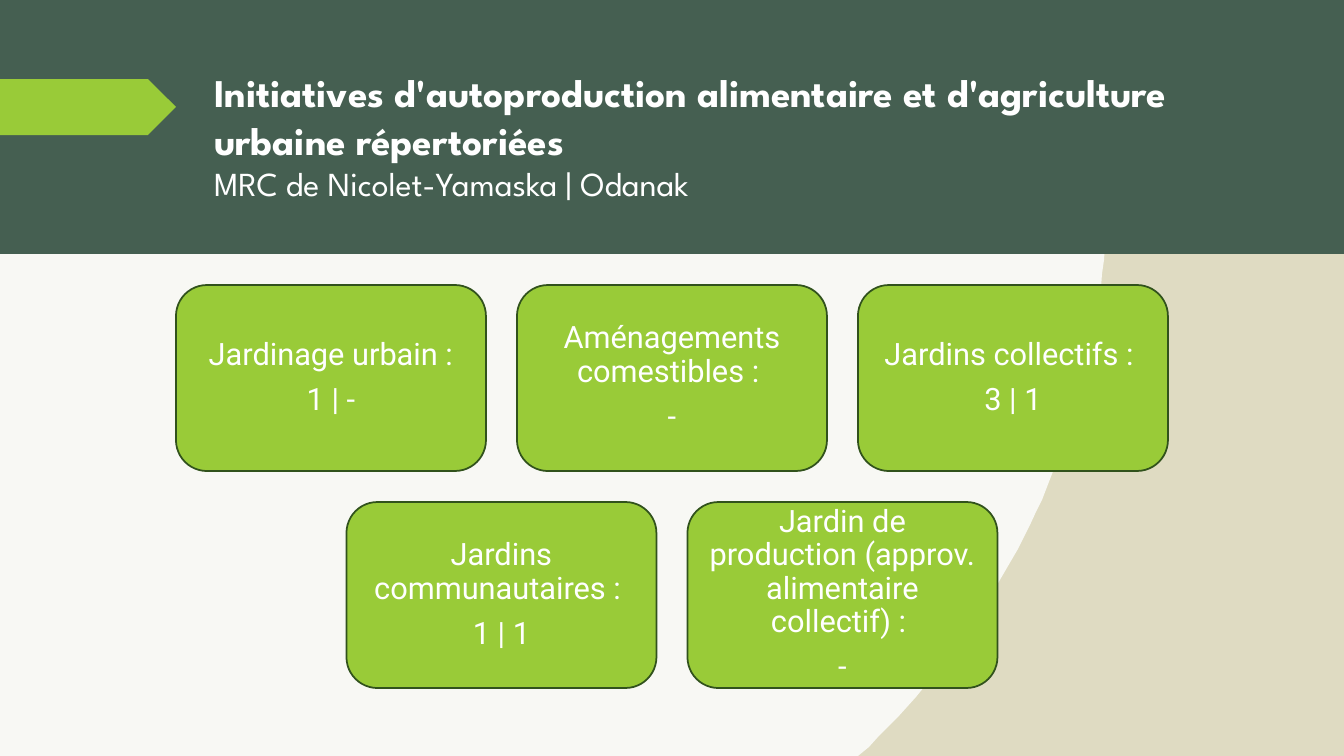
import math
from pptx import Presentation
from pptx import util as u
from pptx.dml.color import RGBColor
from pptx.enum import shapes as sh, text as tx

WIDE, HIGH = 1344, 756
SCALE = 12192000 / WIDE
GREEN, WHITE = "99CB38", "FFFFFF"
ROWS = [
    [("Jardinage urbain :", "1 | -"),
     ("Aménagements comestibles : ", "-"),
     ("Jardins collectifs : ", "3 | 1")],
    [("Jardins communautaires : ", "1 | 1"),
     ("Jardin de production (approv. alimentaire collectif) : ", "-")],
]


def px(n):
    return u.Emu(round(n * SCALE))


def tint(color, code):
    color.rgb = RGBColor.from_string(code)


def paint(item, code, edge=None):
    item.shadow.inherit = False
    item.fill.solid()
    tint(item.fill.fore_color, code)
    if edge:
        tint(item.line.color, edge)
        item.line.width = u.Pt(1.25)
    else:
        item.line.fill.background()


def shape(slide, kind, box, code, edge=None):
    item = slide.shapes.add_shape(kind, *map(px, box))
    paint(item, code, edge)
    return item


def write(para, words, face, size, bold=False):
    run = para.add_run()
    run.text = words
    run.font.name, run.font.size, run.font.bold = face, u.Pt(size), bold
    tint(run.font.color, WHITE)


def ground(slide, box):
    x, y, w, h = box
    slide.background.fill.solid()
    tint(slide.background.fill.fore_color, "DFDBC2")
    mid_x, mid_y, rad = x + w / 4, y + h / 4, math.hypot(w, h) / 2
    low, top = math.asin((y - mid_y) / rad), math.asin((y + h - mid_y) / rad)
    steps = 60
    turns = [low + (top - low) * i / steps for i in range(steps + 1)]
    arc = [(mid_x + rad * math.cos(t), mid_y + rad * math.sin(t)) for t in turns]
    pen = slide.shapes.build_freeform(x, y, scale=SCALE)
    pen.add_line_segments(arc + [(x, y + h)], close=True)
    paint(pen.convert_to_shape(), "F8F8F4")


def header(slide, box):
    x, y, w, h = box
    shape(slide, sh.MSO_SHAPE.RECTANGLE, box, "455F51")
    shape(slide, sh.MSO_SHAPE.PENTAGON, (x, y + 79, 176, 56), GREEN)
    title = slide.shapes.title
    title.left, title.top, title.width, title.height = map(
        px, (x + 204, y + 56, w - 310, h - 94))
    slide.shapes._spTree.append(title._element)
    frame = title.text_frame
    frame.word_wrap = True
    frame.auto_size = tx.MSO_AUTO_SIZE.NONE
    frame.vertical_anchor = tx.MSO_ANCHOR.MIDDLE
    para = frame.paragraphs[0]
    para.alignment = tx.PP_ALIGN.LEFT
    face = "League Spartan"
    write(para, "Initiatives d'autoproduction alimentaire et d'agriculture "
          "urbaine répertoriées ", face, 28, True)
    para.add_line_break()
    write(para, "MRC de Nicolet-Yamaska | Odanak", face, 24)


def card(slide, box, lines):
    item = shape(slide, sh.MSO_SHAPE.ROUNDED_RECTANGLE, box, GREEN, "31521C")
    frame = item.text_frame
    frame.word_wrap = True
    frame.vertical_anchor = tx.MSO_ANCHOR.MIDDLE
    frame.margin_left = frame.margin_right = px(9)
    frame.margin_top = frame.margin_bottom = px(9)
    for i, words in enumerate(lines):
        para = frame.add_paragraph() if i else frame.paragraphs[0]
        para.alignment = tx.PP_ALIGN.CENTER
        para.line_spacing = 0.9
        para.space_after = u.Pt(8.5)
        write(para, words, "Roboto", 22)


def cards(slide, box):
    x, y, w, h = box
    gap = 31
    wide = (w - 2 * gap) / 3
    high = (h - gap) / 2
    for r, row in enumerate(ROWS):
        span = len(row) * (wide + gap) - gap
        left = x + (w - span) / 2
        for c, lines in enumerate(row):
            spot = (left + c * (wide + gap), y + r * (high + gap), wide, high)
            card(slide, spot, lines)


def main():
    deck = Presentation()
    deck.slide_width, deck.slide_height = px(WIDE), px(HIGH)
    slide = deck.slides.add_slide(deck.slide_layouts[5])
    ground(slide, (0, 0, WIDE, HIGH))
    header(slide, (0, 0, WIDE, 254))
    cards(slide, (176, 285, 992, 403))
    deck.save("out.pptx")


if __name__ == "__main__":
    main()
